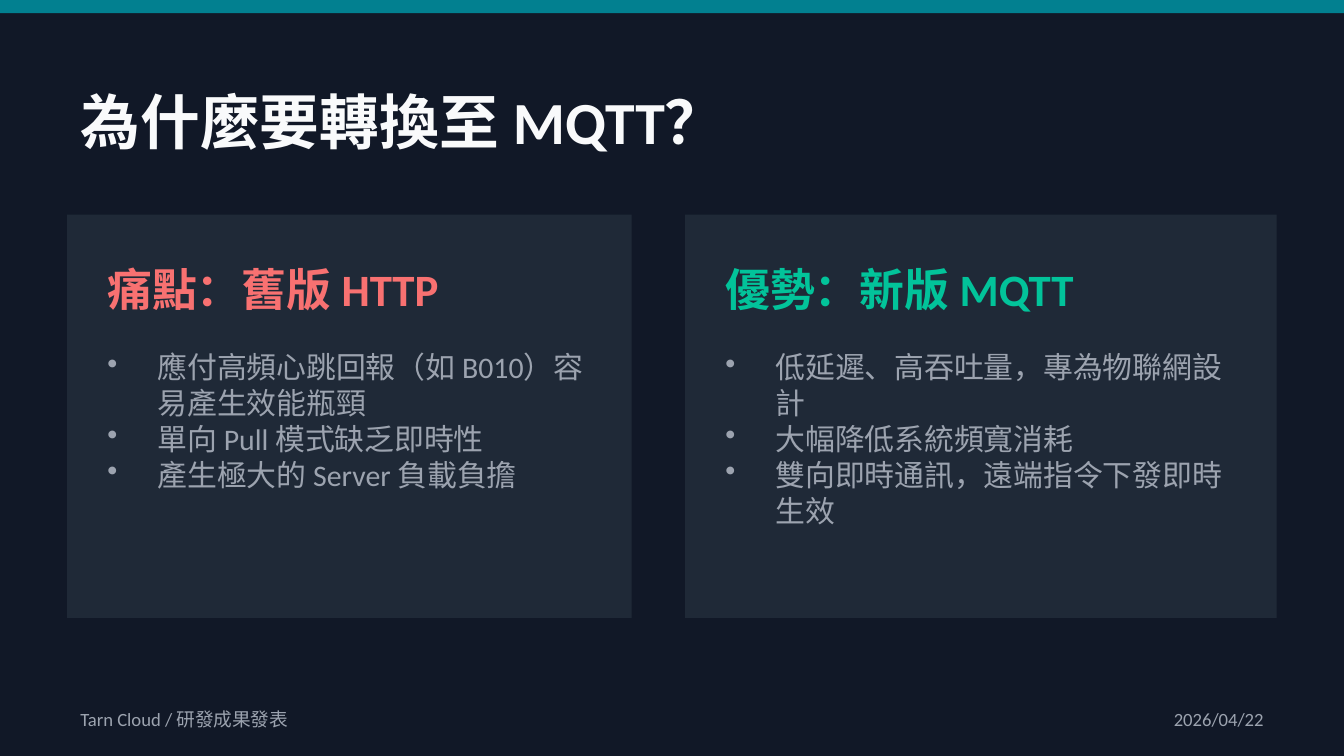
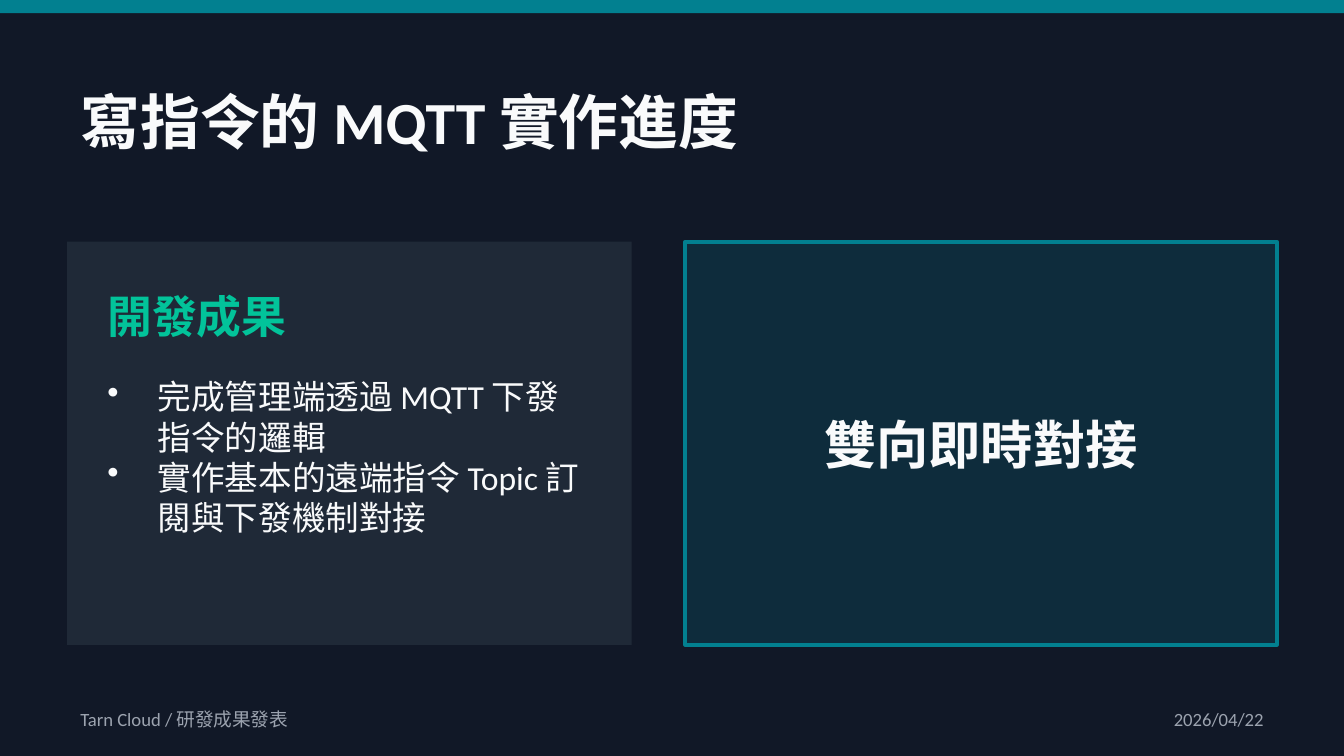
import pptx
import pptx.dml.color
import pptx.enum.shapes
import pptx.enum.text
import pptx.oxml.ns
import pptx.util
from lxml import etree

Cm = pptx.util.Cm
Pt = pptx.util.Pt
ALIGN = pptx.enum.text.PP_ALIGN
ANCHOR = pptx.enum.text.MSO_ANCHOR
qn = pptx.oxml.ns.qn

NIGHT, SLATE, TEAL = "111827", "1F2937", "028090"
WHITE, GRAY, RED, GREEN = "F9FAFB", "9CA3AF", "F87171", "02C39A"
WIDTH, HEIGHT, MARGIN, PADDING = 25.4, 14.29, 1.27, 0.76
COLUMNS = [(1.27, 10.67), (12.95, 11.18)]
CARD_HEIGHT = 7.62


def paint(color_format, color):
    color_format.rgb = pptx.dml.color.RGBColor.from_string(color)


def write(box, text, at, size, color, bold=False, align=ALIGN.LEFT,
          anchor=ANCHOR.MIDDLE, inset=True, bullets=False):
    box.left, box.top, box.width, box.height = map(Cm, at)
    frame = box.text_frame
    frame.text = text
    frame.word_wrap = True
    frame.auto_size = pptx.enum.text.MSO_AUTO_SIZE.NONE
    frame.vertical_anchor = anchor
    if not inset:
        frame.margin_left = frame.margin_right = 0
        frame.margin_top = frame.margin_bottom = 0
    for paragraph in frame.paragraphs:
        paragraph.alignment = align
        if bullets:
            properties = paragraph._p.get_or_add_pPr()
            properties.set("marL", str(Cm(0.95)))
            properties.set("indent", str(-Cm(0.95)))
            etree.SubElement(properties, qn("a:buChar")).set("char", "•")
        paragraph.font.name = "Calibri"
        paragraph.font.size = Pt(size)
        paragraph.font.bold = bold
        paint(paragraph.font.color, color)


deck = [
    ("為什麼要轉換至 MQTT？", 4.06, 16, GRAY, [
        ("痛點：舊版 HTTP", RED, [
            "應付高頻心跳回報（如 B010）容易產生效能瓶頸",
            "單向 Pull 模式缺乏即時性",
            "產生極大的 Server 負載負擔"]),
        ("優勢：新版 MQTT", GREEN, [
            "低延遲、高吞吐量，專為物聯網設計",
            "大幅降低系統頻寬消耗",
            "雙向即時通訊，遠端指令下發即時生效"]),
    ]),
    ("寫指令的 MQTT 實作進度", 4.57, 18, WHITE, [
        ("開發成果", GREEN, [
            "完成管理端透過 MQTT 下發指令的邏輯",
            "實作基本的遠端指令 Topic 訂閱與下發機制對接"]),
    ]),
]

prs = pptx.Presentation()
prs.slide_width, prs.slide_height = Cm(WIDTH), Cm(HEIGHT)
backdrop = prs.slide_master.background.fill
backdrop.solid()
paint(backdrop.fore_color, NIGHT)

for title, card_top, body_size, body_color, cards in deck:
    slide = prs.slides.add_slide(prs.slide_layouts[5])
    panels = []
    for at, color in [((0, 0, WIDTH, 0.25), TEAL)] + [
            ((left, card_top, width, CARD_HEIGHT), SLATE) for left, width in COLUMNS]:
        panel = slide.shapes.add_shape(
            pptx.enum.shapes.MSO_SHAPE.RECTANGLE, *map(Cm, at))
        panel.shadow.inherit = False
        panel.fill.solid()
        paint(panel.fill.fore_color, color)
        panel.line.fill.background()
        panels.append(panel)

    write(slide.shapes.title, title, (MARGIN, 1.27, 22.86, 2.03), 32, WHITE, bold=True)
    for text, left, width, align in [
            ("Tarn Cloud / 研發成果發表", MARGIN, 12.7, ALIGN.LEFT),
            ("2026/04/22", 21.59, 2.54, ALIGN.RIGHT)]:
        write(slide.shapes.add_textbox(0, 0, 0, 0), text,
              (left, 13.21, width, 0.76), 10, GRAY, align=align)

    for (left, width), (heading, accent, points) in zip(COLUMNS, cards):
        text_left, text_width = left + PADDING, width - 2 * PADDING
        write(slide.shapes.add_textbox(0, 0, 0, 0), heading,
              (text_left, card_top + PADDING, text_width, 1.27), 24, accent,
              bold=True, inset=False)
        write(slide.shapes.add_textbox(0, 0, 0, 0), "\n".join(points),
              (text_left, card_top + 2.54, text_width, 4.57), body_size, body_color,
              anchor=ANCHOR.TOP, inset=False, bullets=True)

highlight = panels[-1]
paint(highlight.fill.fore_color, TEAL)
tint = highlight.fill._xPr.find(qn("a:solidFill"))[0]
etree.SubElement(tint, qn("a:alpha")).set("val", "20000")
highlight.line.fill.solid()
paint(highlight.line.color, TEAL)
highlight.line.width = Pt(2)
left, width = COLUMNS[1]
write(slide.shapes.add_textbox(0, 0, 0, 0), "雙向即時對接",
      (left, card_top + 2.54, width, 2.54), 28, WHITE,
      bold=True, align=ALIGN.CENTER, inset=False)

prs.save("out.pptx")
